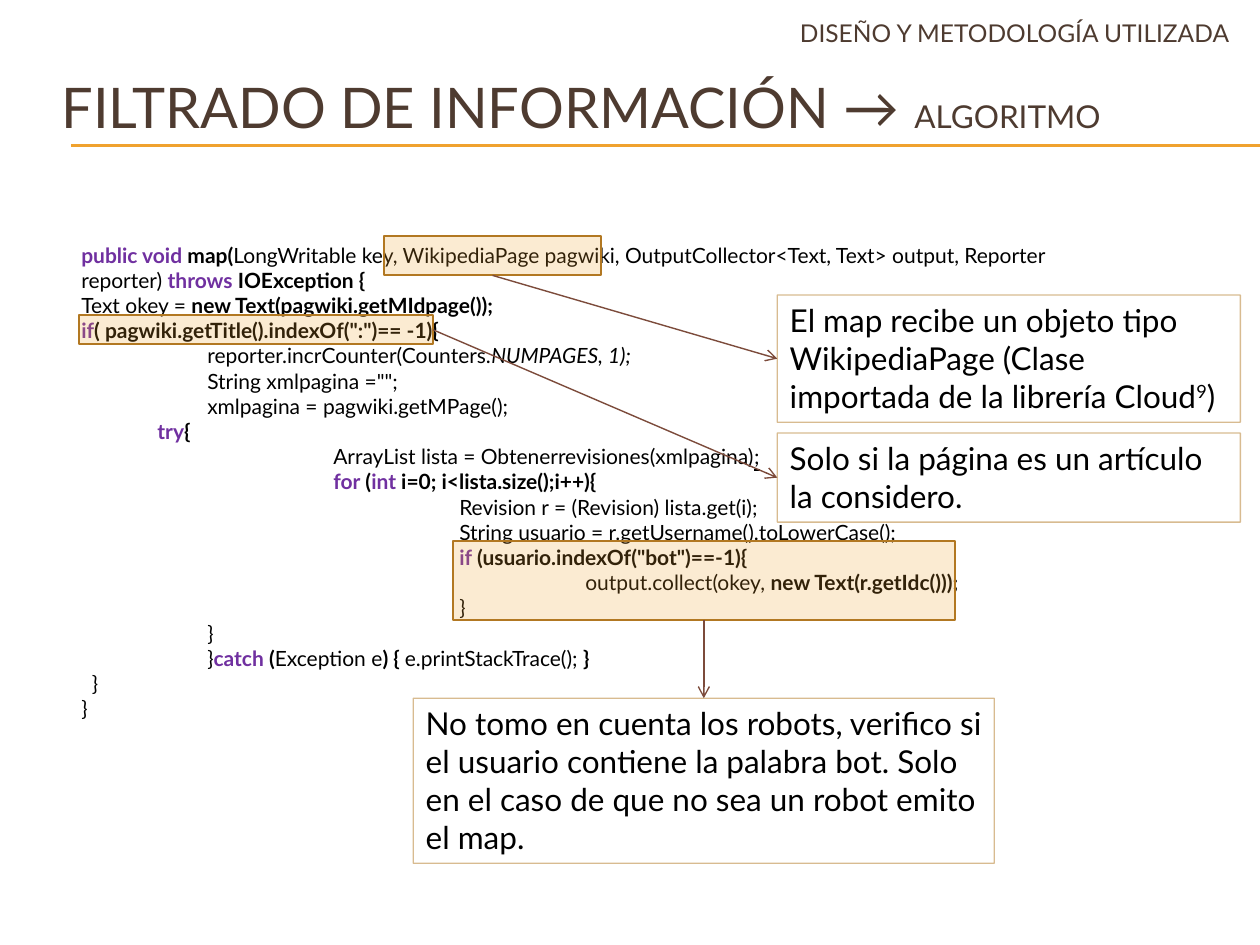
from lxml import etree
from pptx import Presentation
from pptx.dml.color import RGBColor
from pptx.enum.shapes import MSO_CONNECTOR, MSO_SHAPE
from pptx.enum.text import MSO_ANCHOR, PP_ALIGN
from pptx.oxml.ns import qn
from pptx.util import Pt

LINE, RECT = MSO_CONNECTOR.STRAIGHT, MSO_SHAPE.RECTANGLE
TOP, MID = MSO_ANCHOR.TOP, MSO_ANCHOR.MIDDLE
LEFT = PP_ALIGN.LEFT
BROWN = RGBColor(0x4E, 0x3B, 0x30)
BLACK = RGBColor(0, 0, 0)
PURPLE = RGBColor(0x70, 0x30, 0xA0)
GOLD = RGBColor(0xF0, 0xA2, 0x2E)
OCHRE = RGBColor(0xB2, 0x78, 0x22)
RUST = RGBColor(0x7C, 0x4B, 0x3B)
FONT = "Lato"
TAB = 72

STYLES = {
    "": {},
    "b": {"bold": True},
    "i": {"italic": True},
    "u": {"underline": True},
    "key": {"bold": True, "color": PURPLE},
    "small": {"size": 18},
    "sup": {"base": 30000},
}

HEAD = [(0, [("DISEÑO Y METODOLOGÍA UTILIZADA", "")])]
TITLE = [(0, [("FILTRADO DE INFORMACIÓN → ", ""), ("ALGORITMO", "small")])]
CODE = [
    (0, [("public void ", "key"), ("map(", "b"),
         ("LongWritable key, WikipediaPage pagwiki, OutputCollector<Text, Text> output, "
          "Reporter reporter) ", ""),
         ("throws ", "key"), ("IOException {", "b")]),
    (0, [("Text okey = ", ""), ("new Text(pagwiki.getMIdpage());", "b")]),
    (0, [("if", "key"), ('( pagwiki.getTitle().indexOf(":")== -1){', "b")]),
    (TAB, [("reporter.incrCounter(Counters.", ""), ("NUMPAGES, 1);", "i")]),
    (TAB, [('String xmlpagina ="";', "")]),
    (TAB, [("xmlpagina = pagwiki.getMPage();", "")]),
    (43.5, [("try", "key"), ("{", "b")]),
    (2 * TAB, [("ArrayList lista = Obtenerrevisiones(xmlpagina)", ""), (";", "u")]),
    (2 * TAB, [("for", "key"), (" (", "b"), ("int", "key"),
               (" i=0; i<lista.size();i++){", "b")]),
    (3 * TAB, [("Revision r = (Revision) lista.get(i);", "")]),
    (3 * TAB, [("String usuario = r.getUsername().toLowerCase();", "")]),
    (3 * TAB, [("if", "key"), (' (usuario.indexOf("bot")==-1){', "b")]),
    (4 * TAB, [("output.collect(okey, ", ""), ("new Text(r.getIdc()));", "b")]),
    (3 * TAB, [("}", "")]),
    (TAB, [("}", "")]),
    (TAB, [("}", ""), ("catch", "key"), (" (", "b"), ("Exception e", ""), (") { ", "b"),
           ("e.printStackTrace(); ", ""), ("}", "b")]),
    (6, [("}", "")]),
    (0, [("}", "")]),
]
NOTES = [
    {"mark": (219.6, 134.8, 123.8, 22.6), "out": 2,
     "box": (444.2, 168.6, 264.6, 72.7), "into": 1,
     "text": [("El map recibe un objeto tipo WikipediaPage "
               "(Clase importada de la librería Cloud", ""), ("9", "sup"), (")", "")]},
    {"mark": (45, 180.2, 202.5, 16.6), "out": 3,
     "box": (444.2, 247.5, 264.6, 50.9), "into": 1,
     "text": [("Solo si la página es un artículo la considero.", "")]},
    {"mark": (258.8, 309.3, 286.8, 45), "out": 2,
     "box": (236.2, 399, 332, 94.3), "into": 0,
     "text": [("No tomo en cuenta los robots, verifico si el usuario contiene la palabra bot. "
               "Solo en el caso de que no sea un robot emito el map.", "")]},
]

deck = Presentation()
deck.slide_width, deck.slide_height = Pt(720), Pt(540)
slide = deck.slides.add_slide(deck.slide_layouts[6])
shapes = slide.shapes


def fade(fill, share):
    tint = fill._xPr.find(".//" + qn("a:srgbClr"))
    etree.SubElement(tint, qn("a:alpha")).set("val", str(share * 1000))


def write(frame, paras, size=12, color=BLACK, anchor=TOP):
    frame.word_wrap = True
    frame.vertical_anchor = anchor
    for i, (indent, runs) in enumerate(paras):
        para = frame.paragraphs[0] if i == 0 else frame.add_paragraph()
        para.alignment = LEFT
        props = para._p.get_or_add_pPr()
        props.set("marL", str(Pt(indent)))
        props.set("indent", "0")
        for text, name in runs:
            style = STYLES[name]
            run = para.add_run()
            run.text = text
            font = run.font
            font.name = FONT
            font.size = Pt(style.get("size", size))
            font.color.rgb = style.get("color", color)
            font.bold = style.get("bold", False)
            font.italic = style.get("italic", False)
            font.underline = style.get("underline", False)
            if "base" in style:
                run._r.get_or_add_rPr().set("baseline", str(style["base"]))


def label(place, paras, **form):
    write(shapes.add_textbox(*map(Pt, place)).text_frame, paras, **form)


def rect(place, width):
    shape = shapes.add_shape(RECT, *map(Pt, place))
    shape.shadow.inherit = False
    shape.line.color.rgb = OCHRE
    shape.line.width = Pt(width)
    return shape


def link(ends, color, width):
    line = shapes.add_connector(LINE, *map(Pt, ends))
    line.line.color.rgb = color
    line.line.width = Pt(width)
    etree.SubElement(line._element.spPr, qn("a:effectLst"))
    return line


for y in (82.8, 83.5):
    link((40.5, y, 720, y), GOLD, 0.75)
label((28.1, 39.6, 675.4, 42.5), TITLE, size=32, color=BROWN, anchor=MID)
label((39.4, 134.8, 568, 283.7), CODE)

for note in NOTES:
    box = rect(note["box"], 0.75)
    box.fill.background()
    fade(box.line.fill, 50)
    write(box.text_frame, [(0, note["text"])], size=18)
    mark = rect(note["mark"], 1)
    mark.fill.solid()
    mark.fill.fore_color.rgb = GOLD
    fade(mark.fill, 21)
    arrow = link((0, 0, 0, 0), RUST, 0.79)
    arrow.begin_connect(mark, note["out"])
    arrow.end_connect(box, note["into"])
    etree.SubElement(arrow.line._get_or_add_ln(), qn("a:tailEnd")).set("type", "arrow")

label((450, 0, 270, 37.4), HEAD, size=14, color=BROWN, anchor=MID)

deck.save("out.pptx")
